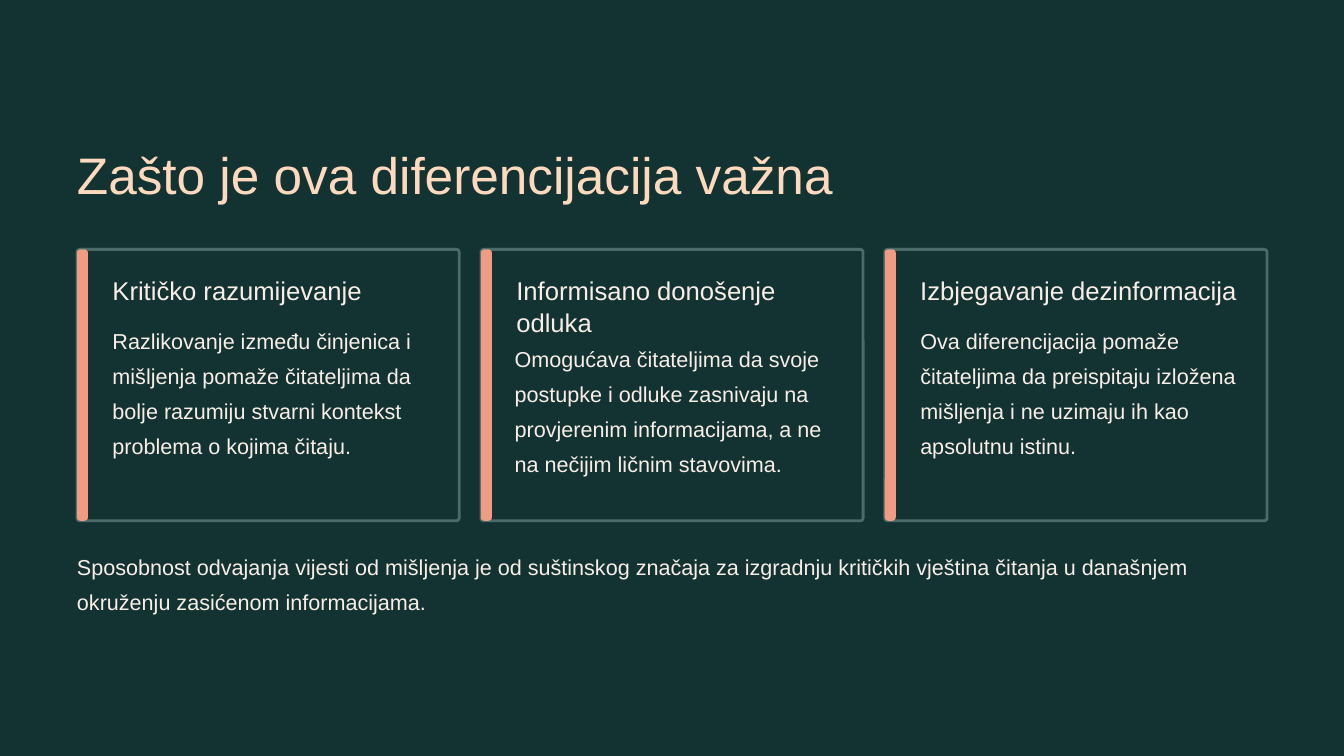
from pptx import Presentation
from pptx.dml.color import RGBColor
from pptx.enum import shapes, text
from pptx.util import Pt

DARK_GREEN = RGBColor(0x12, 0x33, 0x32)
BORDER_GREEN = RGBColor(0x4A, 0x6B, 0x6A)
CORAL = RGBColor(0xEF, 0x9C, 0x82)
PEACH = RGBColor(0xFF, 0xD9, 0xBE)
CREAM = RGBColor(0xF9, 0xEE, 0xE7)

MARGIN = 66
CONTENT_WIDTH = 1020
CARD_TOP, CARD_WIDTH, CARD_HEIGHT, CARD_GAP = 213.8, 327.6, 232.6, 18.6
ACCENT_WIDTH = 9.4
TEXT_INSET = 30.4

# heading, body, body top, body shift to the right
CARDS = [
    ("Kritičko razumijevanje",
     "Razlikovanje između činjenica i mišljenja pomaže čitateljima da bolje "
     "razumiju stvarni kontekst problema o kojima čitaju.", 273.6, 0),
    ("Informisano donošenje odluka",
     "Omogućava čitateljima da svoje postupke i odluke zasnivaju na "
     "provjerenim informacijama, a ne na nečijim ličnim stavovima.", 288.7, -1.5),
    ("Izbjegavanje dezinformacija",
     "Ova diferencijacija pomaže čitateljima da preispitaju izložena "
     "mišljenja i ne uzimaju ih kao apsolutnu istinu.", 273.6, 0),
]


def write(frame, words, size=18.5, color=CREAM, spacing=30):
    frame.word_wrap = True
    frame.auto_size = text.MSO_AUTO_SIZE.NONE
    frame.vertical_anchor = text.MSO_ANCHOR.TOP
    frame.margin_left = frame.margin_right = 0
    frame.margin_top = frame.margin_bottom = 0
    frame.text = words
    paragraph = frame.paragraphs[0]
    paragraph.alignment = text.PP_ALIGN.LEFT
    paragraph.line_spacing = Pt(spacing)
    paragraph.space_before = Pt(0)
    font = paragraph.runs[0].font
    font.name, font.size, font.color.rgb = "Arial", Pt(size), color


def add_text(slide, words, left, top, width, height, **style):
    box = slide.shapes.add_textbox(Pt(left), Pt(top), Pt(width), Pt(height))
    write(box.text_frame, words, **style)


def add_panel(slide, left, width, rounding, fill, border=None):
    """Add a rounded rectangle as tall as a card."""
    panel = slide.shapes.add_shape(
        shapes.MSO_SHAPE.ROUNDED_RECTANGLE,
        Pt(left), Pt(CARD_TOP), Pt(width), Pt(CARD_HEIGHT))
    panel.adjustments[0] = rounding
    panel.shadow.inherit = False
    panel.fill.solid()
    panel.fill.fore_color.rgb = fill
    if border is None:
        panel.line.fill.background()
    else:
        panel.line.color.rgb = border
        panel.line.width = Pt(2.4)


def add_card(slide, left, heading, body, body_top, body_shift):
    add_panel(slide, left, CARD_WIDTH, 0.01, DARK_GREEN, BORDER_GREEN)
    add_panel(slide, left, ACCENT_WIDTH, 0.3, CORAL)
    text_left = left + TEXT_INSET
    add_text(slide, heading, text_left, 234.7, 282, 27.5, size=22, spacing=27.5)
    add_text(slide, body, text_left + body_shift, body_top, 275, 121)


def add_title(slide, words):
    title = slide.shapes.title
    title.left, title.top = Pt(MARGIN), Pt(120.2)
    title.width, title.height = Pt(CONTENT_WIDTH), Pt(55.4)
    write(title.text_frame, words, size=44, color=PEACH, spacing=55)


def main():
    deck = Presentation()
    deck.slide_width, deck.slide_height = Pt(1152), Pt(648)
    slide = deck.slides.add_slide(deck.slide_layouts.get_by_name("Title Only"))
    slide.background.fill.solid()
    slide.background.fill.fore_color.rgb = DARK_GREEN

    add_title(slide, "Zašto je ova diferencijacija važna")
    for column, card in enumerate(CARDS):
        add_card(slide, MARGIN + column * (CARD_WIDTH + CARD_GAP), *card)
    add_text(slide,
             "Sposobnost odvajanja vijesti od mišljenja je od suštinskog značaja "
             "za izgradnju kritičkih vještina čitanja u današnjem okruženju "
             "zasićenom informacijama.",
             MARGIN, 467.3, CONTENT_WIDTH, 60.5)
    deck.save("out.pptx")


if __name__ == "__main__":
    main()
